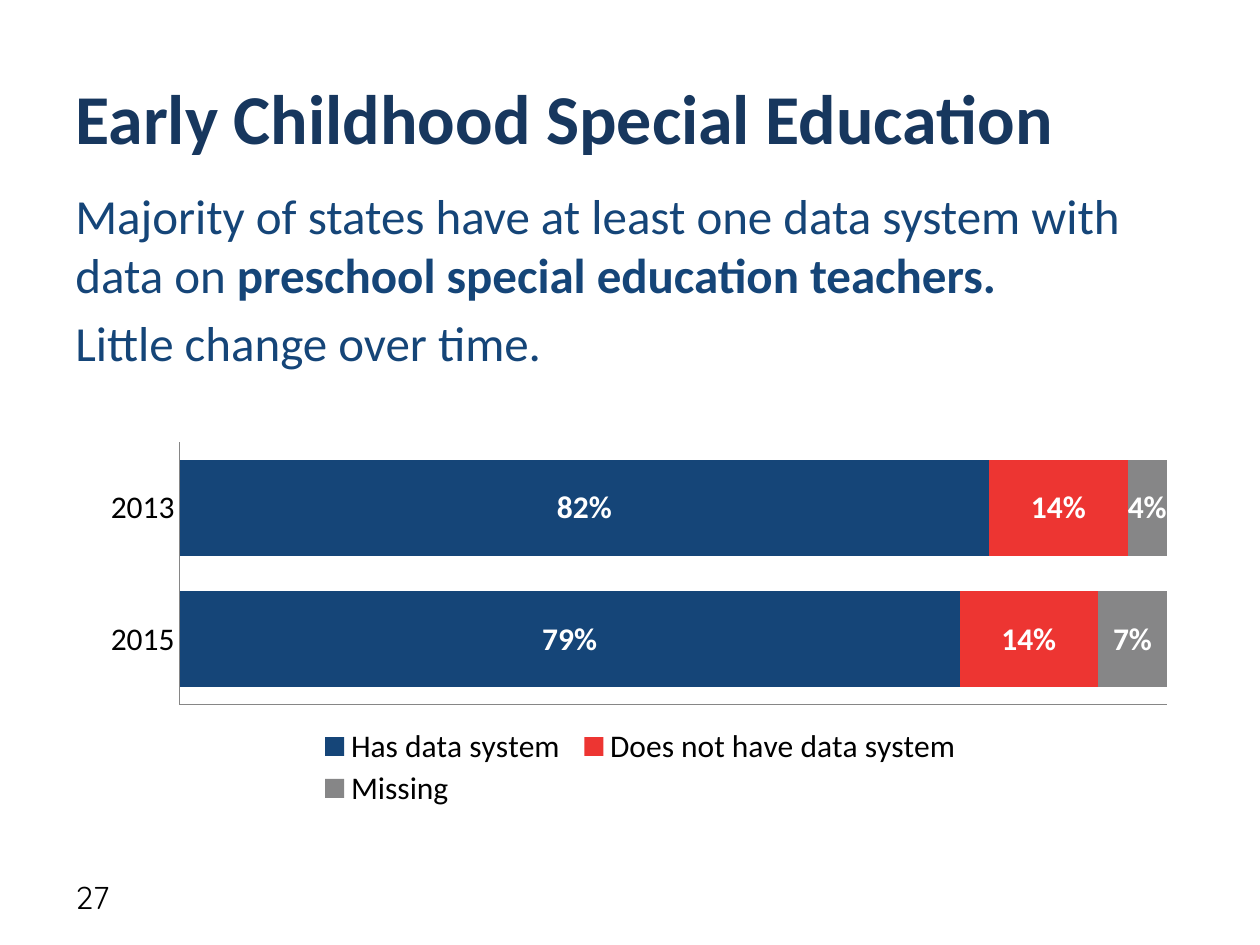
"""Build the Early Childhood Special Education slide with a stacked bar chart."""
from dataclasses import dataclass

from lxml.etree import SubElement
from pptx import Presentation
from pptx.chart.data import CategoryChartData
from pptx.dml.color import RGBColor
from pptx.enum.chart import (XL_CHART_TYPE, XL_LEGEND_POSITION,
                             XL_TICK_LABEL_POSITION, XL_TICK_MARK)
from pptx.enum.text import MSO_ANCHOR, MSO_AUTO_SIZE
from pptx.oxml.ns import qn
from pptx.util import Cm, Pt

COLORS = {"title": "17375E", "blue": "154578", "red": "ED3532", "gray": "868687",
          "axis": "868686", "black": "000000", "white": "FFFFFF"}


@dataclass
class Text:
    box: tuple
    paragraphs: list
    size: int
    color: str
    font: str = "Calibri"
    anchor: MSO_ANCHOR = MSO_ANCHOR.MIDDLE
    auto_size: MSO_AUTO_SIZE = MSO_AUTO_SIZE.NONE
    space_before: float = 0


@dataclass
class Series:
    name: str
    values: tuple
    color: str


TEXTS = [
    Text((1.27, 0.76, 22.86, 3.18), [[("Early Childhood Special Education", True)]],
         40, "title"),
    Text((1.27, 3.61, 22.53, 4.09),
         [[("Majority of states have at least one data system with data on ", False),
           ("preschool special education teachers.", True)],
          [("Little change over time.", False)]],
         28, "blue", anchor=MSO_ANCHOR.TOP,
         auto_size=MSO_AUTO_SIZE.SHAPE_TO_FIT_TEXT, space_before=5.6),
    Text((1.27, 17.58, 5.92, 1.02), [[("27", False)]], 18, "black", "Quicksand"),
]
CHART_BOX = (1.85, 8.76, 22.12, 7.67)
YEARS = ("2015", "2013")
SERIES = [
    Series("Has data system", (0.79, 0.82), "blue"),
    Series("Does not have data system", (0.14, 0.14), "red"),
    Series("Missing", (0.07, 0.04), "gray"),
]


def rgb(name: str) -> RGBColor:
    return RGBColor.from_string(COLORS[name])


def apply(obj, values: dict) -> None:
    for key, value in values.items():
        setattr(obj, key, value)


def style_font(font, color: str, size: float, bold: bool = False,
               name: str = "Calibri") -> None:
    apply(font, {"size": Pt(size), "bold": bold, "name": name})
    font.color.rgb = rgb(color)


def add_text(s, t: Text) -> None:
    tf = s.shapes.add_textbox(*map(Cm, t.box)).text_frame
    apply(tf, {"word_wrap": True, "auto_size": t.auto_size,
               "vertical_anchor": t.anchor})
    for i, runs in enumerate(t.paragraphs):
        p = tf.add_paragraph() if i else tf.paragraphs[0]
        p.space_before = Pt(t.space_before)
        for text, bold in runs:
            r = p.add_run()
            r.text = text
            style_font(r.font, t.color, t.size, bold, t.font)


def set_layout(parent, index: int, values: dict) -> None:
    for old in parent.findall(qn("c:layout")):
        parent.remove(old)
    layout = SubElement(parent, qn("c:layout"))
    parent.insert(index, layout)
    manual = SubElement(layout, qn("c:manualLayout"))
    for tag, value in values.items():
        SubElement(manual, qn(f"c:{tag}")).set("val", str(value))


def add_bars(s) -> None:
    data = CategoryChartData(number_format="0%")
    data.categories = YEARS
    for item in SERIES:
        data.add_series(item.name, item.values)
    chart = s.shapes.add_chart(XL_CHART_TYPE.BAR_STACKED, *map(Cm, CHART_BOX),
                               data).chart
    apply(chart, {"has_title": False, "has_legend": True})
    style_font(chart.font, "black", 18)
    apply(chart.legend, {"position": XL_LEGEND_POSITION.BOTTOM,
                         "include_in_layout": False})
    style_font(chart.legend.font, "black", 18)
    plot = chart.plots[0]
    apply(plot, {"gap_width": 37, "overlap": 100, "vary_by_categories": False})
    for item, series in zip(SERIES, plot.series):
        series.format.fill.solid()
        series.format.fill.fore_color.rgb = rgb(item.color)
        labels = series.data_labels
        apply(labels, {"show_value": True, "number_format": "0%",
                       "number_format_is_linked": False})
        style_font(labels.font, "white", 18, True)
    for axis in (chart.category_axis, chart.value_axis):
        apply(axis, {"major_tick_mark": XL_TICK_MARK.NONE,
                     "minor_tick_mark": XL_TICK_MARK.NONE,
                     "has_major_gridlines": False})
        axis.format.line.color.rgb = rgb("axis")
        axis.format.line.width = Pt(0.75)
    apply(chart.value_axis, {"minimum_scale": 0, "maximum_scale": 1, "major_unit": 0.2,
                             "tick_label_position": XL_TICK_LABEL_POSITION.NONE})
    area = chart.element.find(".//" + qn("c:plotArea"))
    set_layout(area, 0, {"layoutTarget": "inner", "xMode": "edge", "yMode": "edge",
                         "x": 0.08, "y": 0.02, "w": 0.9, "h": 0.69})
    legend = chart.element.find(".//" + qn("c:legend"))
    set_layout(legend, 1, {"xMode": "edge", "yMode": "edge",
                           "x": 0.2, "y": 0.76, "w": 0.6, "h": 0.23})


def main() -> None:
    prs = Presentation()
    apply(prs, {"slide_width": Cm(25.4), "slide_height": Cm(19.05)})
    s = prs.slides.add_slide(prs.slide_layouts[6])
    for text in TEXTS:
        add_text(s, text)
    add_bars(s)
    prs.save("out.pptx")


if __name__ == "__main__":
    main()
